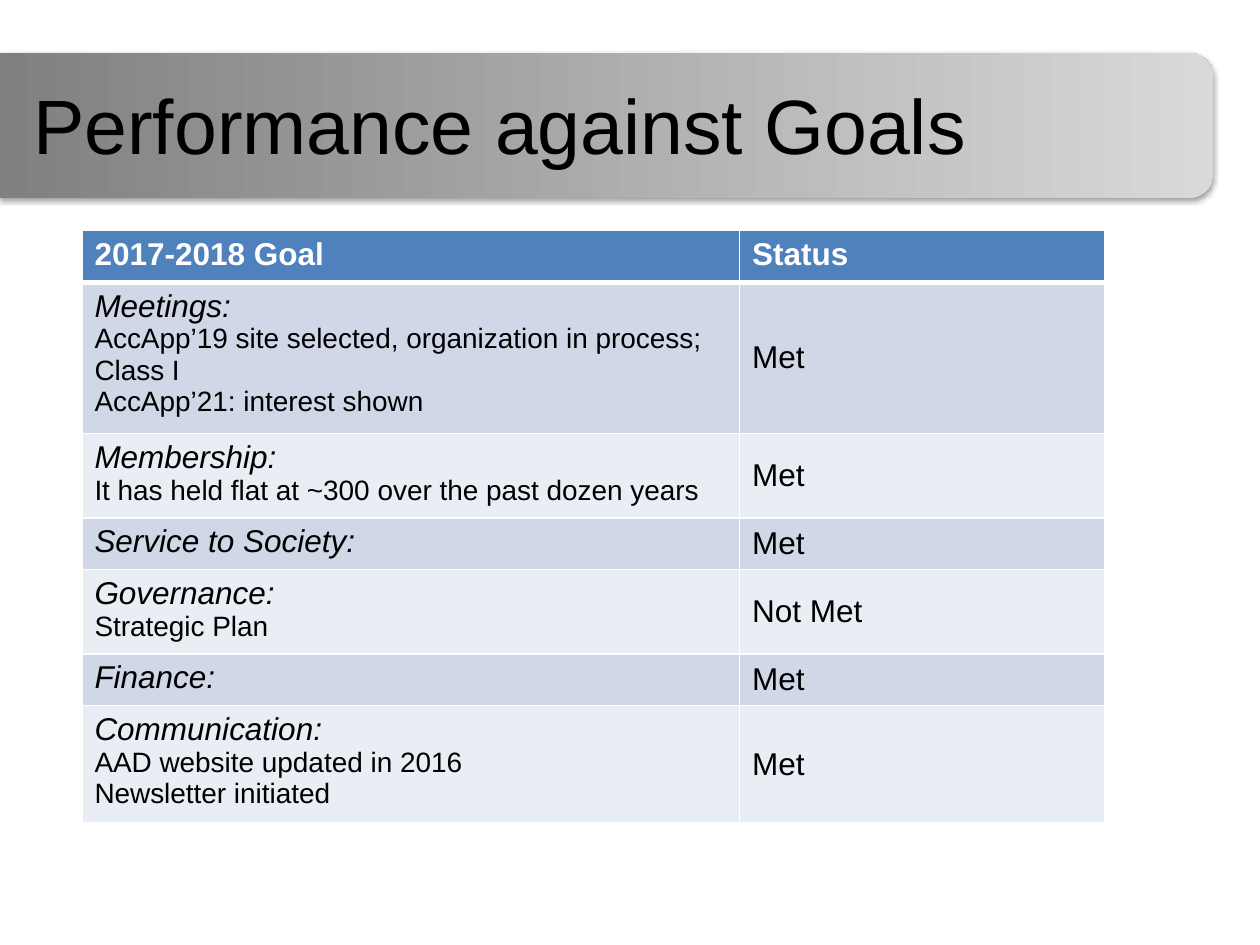
"""Build the Performance against Goals slide."""
from lxml.etree import SubElement
from pptx import Presentation
from pptx.dml.color import RGBColor
from pptx.enum.shapes import MSO_SHAPE
from pptx.enum.text import MSO_ANCHOR, PP_ALIGN
from pptx.oxml import parse_xml
from pptx.oxml.ns import nsdecls, qn
from pptx.util import Inches, Pt

BLACK = RGBColor(0x00, 0x00, 0x00)
WHITE = RGBColor(0xFF, 0xFF, 0xFF)
DARK_GRAY = RGBColor(0x80, 0x80, 0x80)
LIGHT_GRAY = RGBColor(0xD9, 0xD9, 0xD9)
HEADER_BLUE = RGBColor(0x4F, 0x81, 0xBD)
BANDS = [RGBColor(0xD0, 0xD8, 0xE8), RGBColor(0xE9, 0xED, 0xF4)]

GOALS = [
    ("2017-2018 Goal", "Status", 0.41),
    ("Meetings:\nAccApp’19 site selected, organization in process; Class I\n"
     "AccApp’21: interest shown", "Met", 1.19),
    ("Membership:\nIt has held flat at ~300 over the past dozen years", "Met", 0.67),
    ("Service to Society:", "Met", 0.41),
    ("Governance:\nStrategic Plan", "Not Met", 0.67),
    ("Finance:", "Met", 0.41),
    ("Communication:\nAAD website updated in 2016\nNewsletter initiated", "Met", 0.92),
]


def style_font(font, size, color):
    font.name = "Arial"
    font.size = Pt(size)
    font.color.rgb = color


def add_border(cell, side, width):
    line = SubElement(cell._tc.get_or_add_tcPr(), qn(f"a:{side}"), w=str(Pt(width)))
    fill = SubElement(line, qn("a:solidFill"))
    SubElement(fill, qn("a:srgbClr"), val=str(WHITE))


prs = Presentation()
prs.slide_width, prs.slide_height = Inches(10), Inches(7.5)
slide = prs.slides.add_slide(prs.slide_layouts[6])

banner = slide.shapes.add_shape(MSO_SHAPE.ROUND_2_SAME_RECTANGLE,
                                Inches(4.24), Inches(-3.82), Inches(1.15), Inches(9.63))
banner.rotation = 90
banner.line.fill.background()
banner.fill.gradient()
banner.fill.gradient_angle = 0
for stop, color, position in zip(banner.fill.gradient_stops, (DARK_GRAY, LIGHT_GRAY), (0, 1)):
    stop.color.rgb = color
    stop.position = position
banner_properties = banner._element.spPr
banner_properties.find(qn("a:gradFill")).set("rotWithShape", "0")
banner_properties.append(parse_xml(
    f'<a:effectLst {nsdecls("a")}><a:outerShdw blurRad="{Pt(3.1)}" dist="{Pt(1.6)}" '
    'dir="5400000" rotWithShape="0"><a:srgbClr val="000000"><a:alpha val="38000"/>'
    '</a:srgbClr></a:outerShdw></a:effectLst>'))

title = slide.shapes.add_textbox(Inches(0), Inches(0.52), Inches(7.94), Inches(1.05))
title_frame = title.text_frame
title_frame.word_wrap = True
title_frame.vertical_anchor = MSO_ANCHOR.MIDDLE
title_frame.margin_bottom = Inches(0.18)
title_frame.text = "Performance against Goals"
title_frame.paragraphs[0].alignment = PP_ALIGN.CENTER
style_font(title_frame.paragraphs[0].runs[0].font, 44, BLACK)

goals_table = slide.shapes.add_table(len(GOALS), 2, Inches(0.65), Inches(1.83),
                                     Inches(8.12), Inches(4.68)).table
goals_table.columns[0].width = Inches(5.22)
goals_table.columns[1].width = Inches(2.9)

for row, (goal, status, height) in enumerate(GOALS):
    goals_table.rows[row].height = Inches(height)
    is_header = row == 0
    for column, wording in enumerate((goal, status)):
        cell = goals_table.cell(row, column)
        cell.text_frame.text = wording
        for index, paragraph in enumerate(cell.text_frame.paragraphs):
            font = paragraph.runs[0].font
            style_font(font, 18 if index == 0 else 16, WHITE if is_header else BLACK)
            font.bold = is_header
            font.italic = not is_header and column == 0 and index == 0
        if column == 1 and not is_header:
            cell.vertical_anchor = MSO_ANCHOR.MIDDLE
        for side in ("lnL", "lnR", "lnT", "lnB"):
            header_rule = (row, side) in ((0, "lnB"), (1, "lnT"))
            add_border(cell, side, 3 if header_rule else 1)
        cell.fill.solid()
        cell.fill.fore_color.rgb = HEADER_BLUE if is_header else BANDS[(row - 1) % 2]

prs.save("out.pptx")
